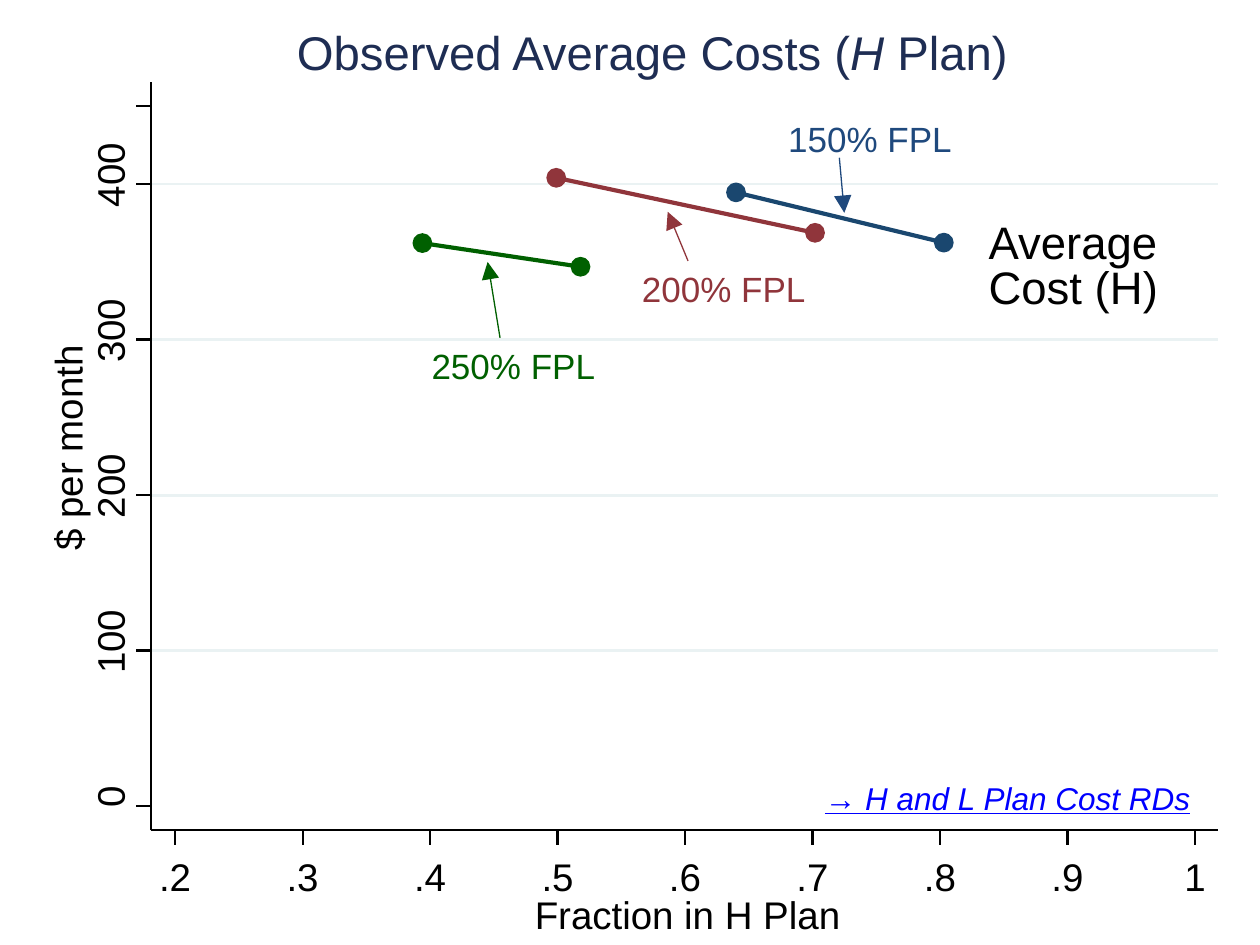
from lxml.etree import SubElement
from pptx import Presentation
from pptx.dml.color import RGBColor
from pptx.enum.shapes import MSO_CONNECTOR as Connector, MSO_SHAPE as Shape
from pptx.enum.text import MSO_ANCHOR as Anchor, MSO_AUTO_SIZE as AutoSize, PP_ALIGN as Align
from pptx.oxml.ns import qn
from pptx.util import Cm, Pt

COLORS = {
    "white": "FFFFFF", "black": "000000", "grid": "EAF2F3", "title": "1E2D53",
    "navy": "1A476F", "blue": "1F497D", "maroon": "90353B", "green": "006000",
    "link": "0000FF",
}

# Plot area in cm
LEFT, RIGHT, TOP, BOTTOM = 3.05, 24.56, 1.65, 16.74
TICK = 0.3


def share_x(share):
    return 3.53 + (share - 0.2) * 25.7


def cost_y(cost):
    return 16.25 - cost * 0.03135


def add_text(paragraph, text, size=22, color="black", font="Arial", **style):
    run = paragraph.add_run()
    run.text = text
    run.font.name, run.font.size = font, Pt(size)
    run.font.color.rgb = RGBColor.from_string(COLORS[color])
    for attribute, value in style.items():
        setattr(run.font, attribute, value)


class CostFigure:
    """Draws on one slide; all positions are in cm."""

    def __init__(self, slide):
        self.slide = slide
        self.shapes = slide.shapes

    def frame(self, shape, align, inset=0, wrap=True):
        frame = shape.text_frame
        frame.auto_size = AutoSize.NONE
        frame.word_wrap = wrap
        frame.vertical_anchor = Anchor.TOP
        frame.margin_left = frame.margin_right = Cm(inset)
        frame.margin_top = frame.margin_bottom = Cm(inset / 2)
        frame.paragraphs[0].alignment = align
        return frame.paragraphs[0]

    def title(self, parts, x, y, width, height):
        title = self.shapes.title
        title.left, title.top = Cm(x), Cm(y)
        title.width, title.height = Cm(width), Cm(height)
        paragraph = self.frame(title, Align.CENTER)
        for text, italic in parts:
            add_text(paragraph, text, size=27, color="title", italic=italic)

    def label(self, text, x, y, width, height=0.94, rotation=0,
              align=Align.CENTER, inset=0, wrap=False, **style):
        """Text box centred on (x, y)."""
        box = self.shapes.add_textbox(Cm(x - width / 2), Cm(y - height / 2),
                                      Cm(width), Cm(height))
        box.rotation = rotation
        add_text(self.frame(box, align, inset, wrap), text, **style)

    def shape(self, kind, x, y, width, height, color, weight):
        shape = self.shapes.add_shape(kind, Cm(x), Cm(y), Cm(width), Cm(height))
        shape.shadow.inherit = False
        shape.fill.solid()
        shape.fill.fore_color.rgb = RGBColor.from_string(COLORS[color])
        shape.line.color.rgb = RGBColor.from_string(COLORS[color])
        shape.line.width = Pt(weight)

    def point(self, x, y, color, size=0.34):
        self.shape(Shape.OVAL, x - size / 2, y - size / 2, size, size, color, 1.63)

    def line(self, start, end, color="black", weight=1.25, arrow=False):
        line = self.shapes.add_connector(Connector.STRAIGHT, *map(Cm, start + end))
        line.line.color.rgb = RGBColor.from_string(COLORS[color])
        line.line.width = Pt(weight)
        properties = line._element.spPr
        SubElement(properties, qn("a:effectLst"))
        if arrow:
            SubElement(properties.find(qn("a:ln")), qn("a:tailEnd"),
                       type="triangle", w="lg", len="lg")


def main():
    deck = Presentation()
    deck.slide_width, deck.slide_height = Cm(25.4), Cm(19.05)
    figure = CostFigure(deck.slides.add_slide(deck.slide_layouts[5]))

    # Plot background and grid
    figure.shape(Shape.RECTANGLE, LEFT, TOP, RIGHT - LEFT, BOTTOM - TOP, "white", 1.25)
    for cost in range(100, 500, 100):
        figure.line((LEFT, cost_y(cost)), (RIGHT, cost_y(cost)), "grid", 1.63)

    # Average cost by income group: (share, cost) at both ends
    groups = [
        ("navy", (0.64, 394.6), (0.803, 362.3)),
        ("maroon", (0.499, 404), (0.702, 368.6)),
        ("green", (0.394, 362), (0.518, 346.8)),
    ]
    for color, *ends in groups:
        ends = [(share_x(share), cost_y(cost)) for share, cost in ends]
        figure.line(*ends, color, 2.38)
        for x, y in ends:
            figure.point(x, y, color)

    # Cost axis
    figure.line((LEFT, BOTTOM), (LEFT, TOP))
    for cost in (0, 100, 200, 300, 400, 450):
        y = cost_y(cost)
        figure.line((LEFT, y), (LEFT - TICK, y))
        if cost % 100 == 0:
            figure.label(str(cost), 2.21, y - 0.18, 1.32, rotation=270)
    figure.label("$ per month", 1.36, 9.03, 5.2, rotation=270)

    # Share axis
    figure.line((LEFT, BOTTOM), (RIGHT, BOTTOM))
    for tenths in range(2, 11):
        x = share_x(tenths / 10)
        figure.line((x, BOTTOM), (x, BOTTOM + TICK))
        figure.label("1" if tenths == 10 else f".{tenths}", x, 17.67, 0.66)
    figure.label("Fraction in H Plan", 13.86, 18.43, 6.22)

    # Curve name
    for words, y in (("Average", 4.89), ("Cost (H)", 5.8)):
        figure.label(words, 21.64, y, 3.42, 1.14, align=Align.LEFT, size=26)

    # Group names with arrows to their lines
    callouts = [
        ("150% FPL", "blue", (17.54, 2.79), (16.92, 3.18), (17.02, 4.29)),
        ("200% FPL", "maroon", (14.59, 5.82), (13.87, 5.26), (13.46, 4.27)),
        ("250% FPL", "green", (10.35, 7.37), (10.08, 6.81), (9.83, 5.28)),
    ]
    for name, color, center, start, tip in callouts:
        figure.label(name, *center, 3.35, 0.86, size=20, color=color)
        figure.line(start, tip, color, 0.75, arrow=True)

    # Title and pointer to the related figure
    figure.title([("Observed Average Costs (", False), ("H", True), (" Plan)", False)],
                 3.18, 0.46, 19.94, 1.14)
    figure.label("→ H and L Plan Cost RDs", 20.89, 16.08, 9.02, 1.02,
                 align=Align.LEFT, inset=0.25, wrap=True,
                 size=18, color="link", italic=True, underline=True)

    deck.save("out.pptx")


if __name__ == "__main__":
    main()
